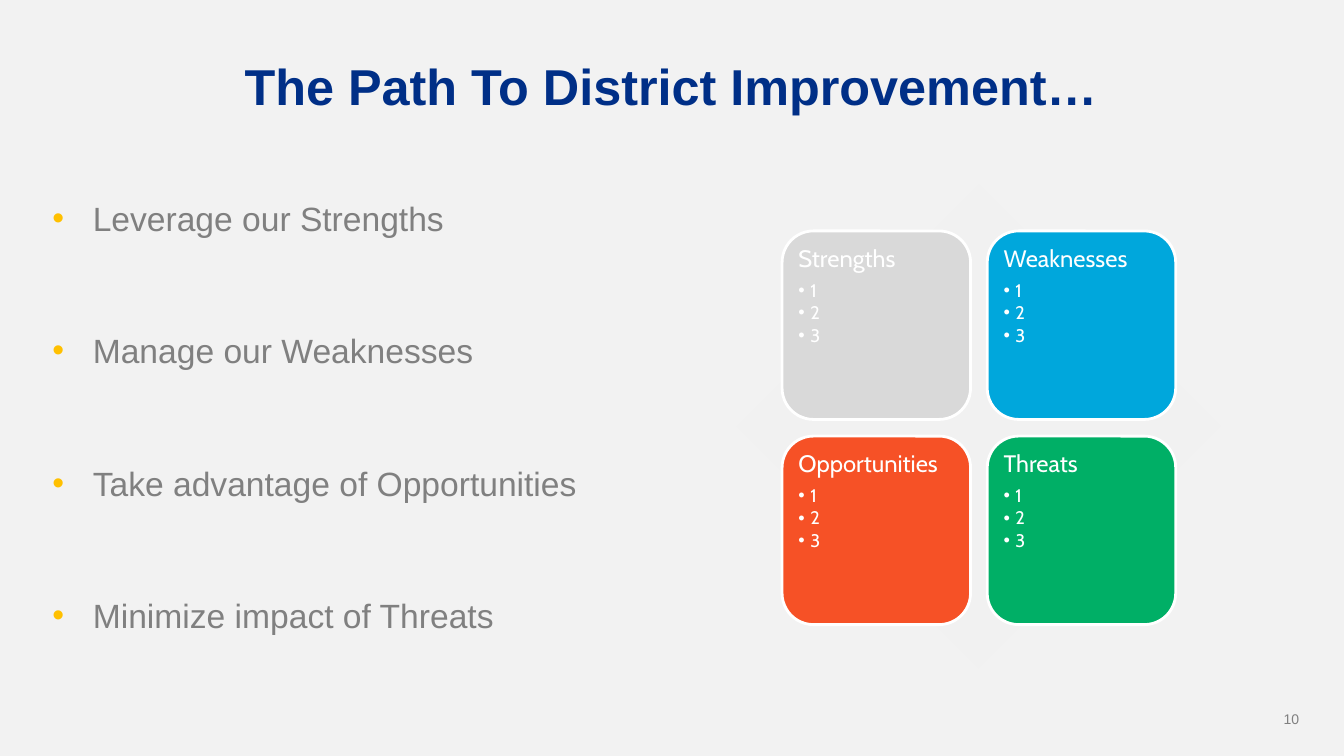
"""Build the district improvement slide with its SWOT matrix."""
from lxml import etree
from pptx import Presentation
from pptx import util as u
from pptx.dml.color import RGBColor
from pptx.enum import shapes, text
from pptx.oxml.ns import qn

COLOURS = {
    "background": "F2F2F2", "navy": "002F87", "grey": "808080",
    "gold": "FFC000", "white": "FFFFFF", "diamond": "F1F1F1",
    "silver": "D9D9D9", "blue": "00A7DC", "orange": "F65126", "green": "00AF66",
}
GOALS = ["Leverage our Strengths", "Manage our Weaknesses",
         "Take advantage of Opportunities", "Minimize impact of Threats"]
QUADRANTS = [("Strengths", "silver"), ("Weaknesses", "blue"),
             ("Opportunities", "orange"), ("Threats", "green")]
ITEMS = ["1", "2", "3"]
TILE_LEFT, TILE_TOP, TILE_SIZE, TILE_PITCH = 19.71, 5.82, 4.75, 5.17


def colour(name):
    """Return the named colour."""
    return RGBColor.from_string(COLOURS[name])


def prepare_frame(shape, anchor, inset_x, inset_y):
    """Set wrapping, anchor and insets, and return the text frame."""
    frame = shape.text_frame
    frame.word_wrap = True
    frame.vertical_anchor = anchor
    frame.margin_left = frame.margin_right = u.Cm(inset_x)
    frame.margin_top = frame.margin_bottom = u.Cm(inset_y)
    return frame


def add_text_box(slide, left, top, width, height, anchor, inset_x=0.25):
    """Add a text box and return its frame."""
    box = slide.shapes.add_textbox(u.Cm(left), u.Cm(top), u.Cm(width), u.Cm(height))
    return prepare_frame(box, anchor, inset_x, 0.13)


def add_paragraph(frame, words, size, ink, font="Arial", bold=False,
                  align=text.PP_ALIGN.LEFT, line=1.0, before=0, after=0):
    """Add one paragraph with one run, using the empty first one if free."""
    first = frame.paragraphs[0]
    paragraph = frame.add_paragraph() if first.runs else first
    paragraph.alignment = align
    paragraph.line_spacing = line
    paragraph.space_before = u.Pt(before)
    paragraph.space_after = u.Pt(after)
    run = paragraph.add_run()
    run.text = words
    run.font.name = font
    run.font.size = u.Pt(size)
    run.font.bold = bold
    run.font.color.rgb = colour(ink)
    return paragraph


def add_bullet(paragraph, indent, ink):
    """Give a paragraph a round bullet with a hanging indent."""
    properties = paragraph._p.get_or_add_pPr()
    properties.set("marL", str(u.Cm(indent)))
    properties.set("indent", str(-u.Cm(indent)))
    tint = etree.SubElement(properties, qn("a:buClr"))
    etree.SubElement(tint, qn("a:srgbClr"), val=COLOURS[ink])
    etree.SubElement(properties, qn("a:buFont"), typeface="Arial")
    etree.SubElement(properties, qn("a:buChar"), char="•")


def add_panel(slide, kind, left, top, size, fill):
    """Add a square filled shape without outline or shadow."""
    shape = slide.shapes.add_shape(kind, u.Cm(left), u.Cm(top), u.Cm(size), u.Cm(size))
    shape.shadow.inherit = False
    shape.fill.solid()
    shape.fill.fore_color.rgb = colour(fill)
    shape.line.fill.background()
    return shape


def add_quadrant(slide, index, heading, fill):
    """Add one tile of the two-by-two matrix with its list."""
    row, column = divmod(index, 2)
    tile = add_panel(slide, shapes.MSO_SHAPE.ROUNDED_RECTANGLE,
                     TILE_LEFT + column * TILE_PITCH, TILE_TOP + row * TILE_PITCH,
                     TILE_SIZE, fill)
    tile.line.color.rgb = colour("white")
    tile.line.width = u.Pt(2)
    frame = prepare_frame(tile, text.MSO_ANCHOR.TOP, 0.18, 0.18)
    add_paragraph(frame, heading, 17, "white", font="Cabin", line=0.9, after=6)
    for item in ITEMS:
        paragraph = add_paragraph(frame, item, 13, "white", font="Cabin",
                                  line=0.9, after=2)
        add_bullet(paragraph, 0.3, "white")


def main():
    """Build and save the slide."""
    presentation = Presentation()
    presentation.slide_width, presentation.slide_height = u.Cm(33.87), u.Cm(19.05)
    slide = presentation.slides.add_slide(presentation.slide_layouts[6])
    slide.background.fill.solid()
    slide.background.fill.fore_color.rgb = colour("background")

    add_panel(slide, shapes.MSO_SHAPE.DIAMOND, 18.57, 4.65, 12.19, "diamond")
    for index, (heading, fill) in enumerate(QUADRANTS):
        add_quadrant(slide, index, heading, fill)

    title = add_text_box(slide, 2.31, 1.07, 29.21, 2.34, text.MSO_ANCHOR.MIDDLE)
    add_paragraph(title, "The Path To District Improvement…", 36, "navy", bold=True,
                  align=text.PP_ALIGN.CENTER, line=0.9)

    goals = add_text_box(slide, 1.07, 4.65, 30.45, 12.19, text.MSO_ANCHOR.TOP)
    for goal in GOALS:
        paragraph = add_paragraph(goals, goal, 24, "grey", line=1.2, before=30, after=30)
        add_bullet(paragraph, 1.02, "gold")

    number = add_text_box(slide, 31.19, 17.78, 1.55, 0.69, text.MSO_ANCHOR.MIDDLE, 0)
    add_paragraph(number, "10", 10, "grey", align=text.PP_ALIGN.RIGHT)

    presentation.save("out.pptx")


if __name__ == "__main__":
    main()
